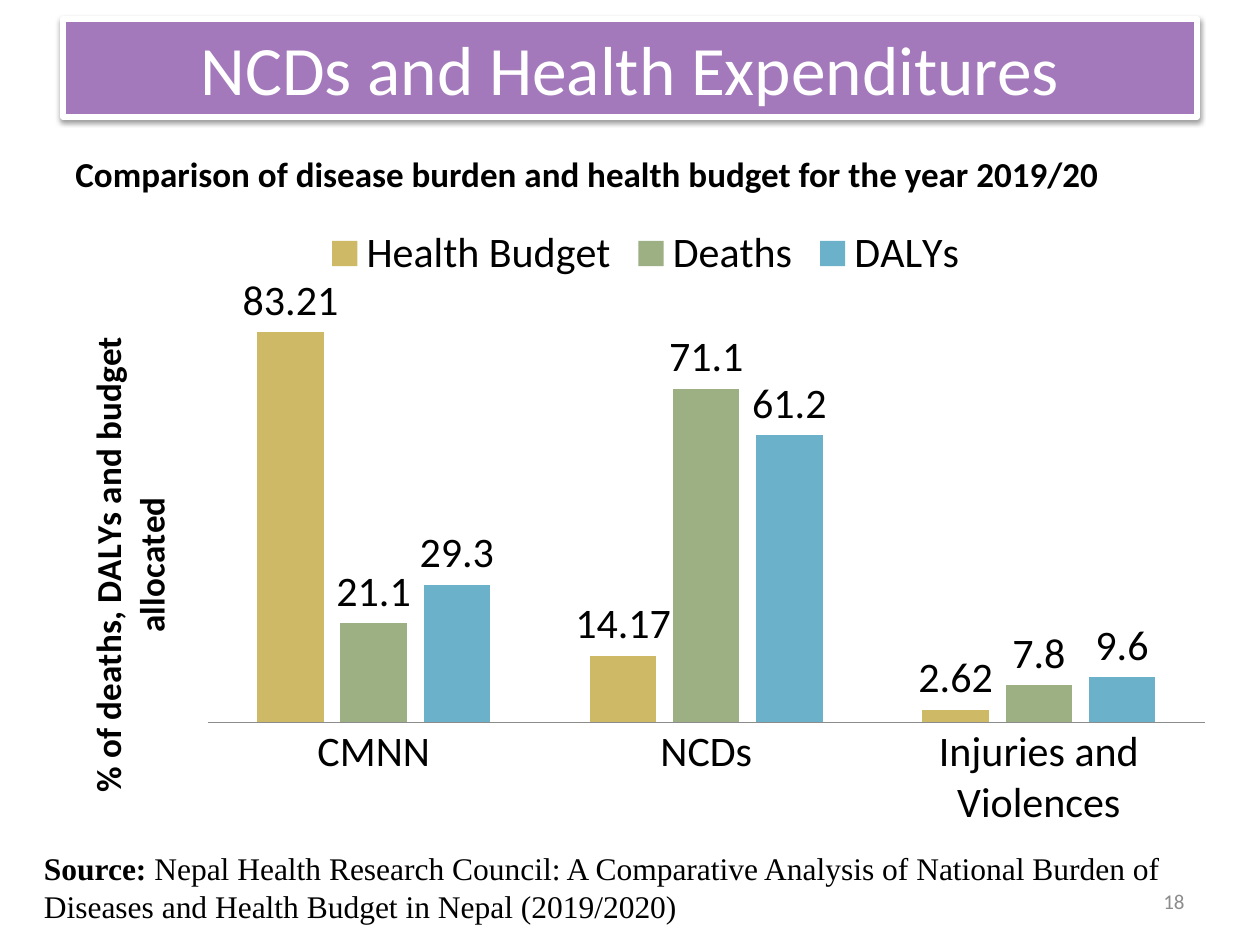
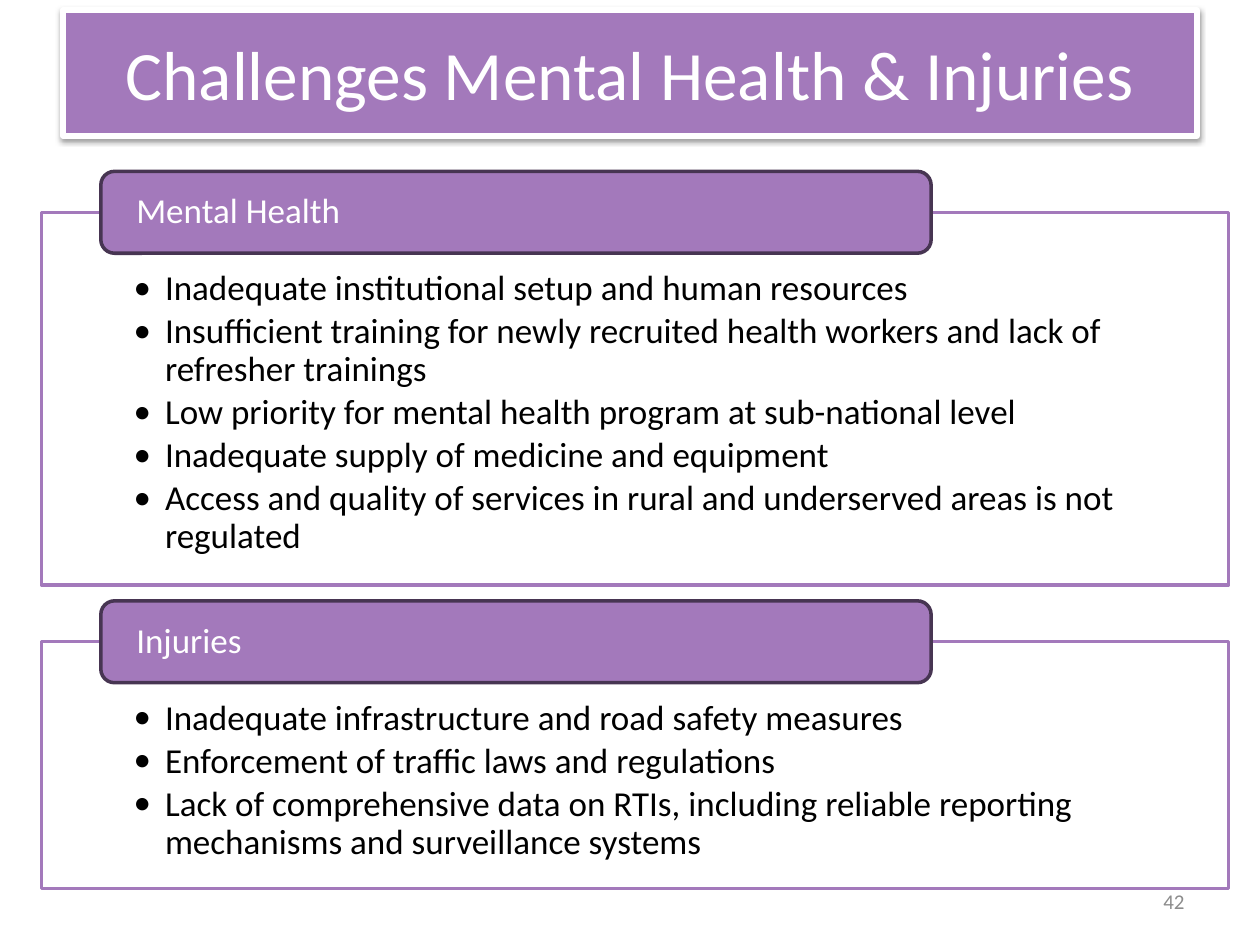
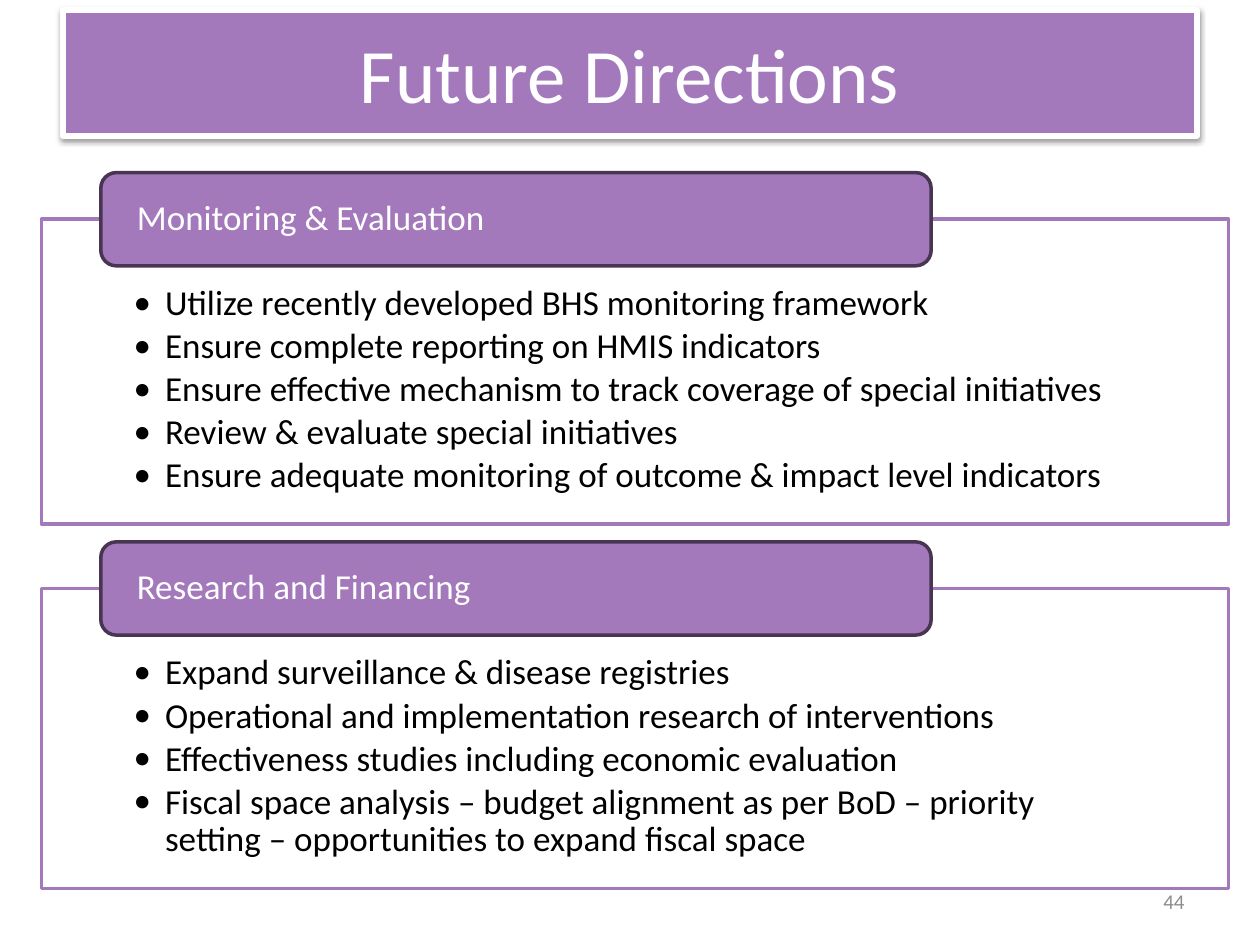
from lxml.etree import SubElement
from pptx import Presentation
from pptx.chart.data import CategoryChartData
from pptx.dml.color import RGBColor
from pptx.enum.chart import XL_CHART_TYPE, XL_LABEL_POSITION, XL_LEGEND_POSITION, XL_TICK_MARK
from pptx.enum.shapes import MSO_SHAPE
from pptx.enum.text import MSO_ANCHOR, PP_ALIGN
from pptx.oxml.ns import qn
from pptx.util import Inches, Pt

PURPLE = RGBColor(0xA3, 0x79, 0xBB)
DARK_PURPLE = RGBColor(0x47, 0x35, 0x52)
WHITE = RGBColor(0xFF, 0xFF, 0xFF)
BLACK = RGBColor(0, 0, 0)
GREY = RGBColor(0x8C, 0x8C, 0x8C)
GOLD = RGBColor(0xCE, 0xB9, 0x66)
GREEN = RGBColor(0x9C, 0xB0, 0x84)
BLUE = RGBColor(0x6B, 0xB1, 0xC9)

BODY_FONT = "Calibri"
SOURCE_FONT = "Times New Roman"


class Deck:
    """Holds the shared style and the page being filled."""

    def __init__(self):
        self.deck = Presentation()
        self.deck.slide_width, self.deck.slide_height = Inches(10), Inches(7.5)
        self.page = None

    def start_page(self, title, number, top=0.08, height=1, size=39.6):
        self.page = self.deck.slides.add_slide(self.deck.slide_layouts[6])
        self.title_band(title, top, height, size)
        self.text(number, 7.17, 6.95, 2.33, 0.4, size=12, color=GREY,
                  align=PP_ALIGN.RIGHT, anchor=MSO_ANCHOR.MIDDLE)

    def style_paragraph(self, para, size, color, bold=None, font=BODY_FONT, align=PP_ALIGN.LEFT):
        para.alignment = align
        para.font.name, para.font.size = font, Pt(size)
        para.font.color.rgb, para.font.bold = color, bold

    def shape(self, kind, left, top, width, height, fill, line, line_width):
        shape = self.page.shapes.add_shape(
            kind, Inches(left), Inches(top), Inches(width), Inches(height))
        shape.shadow.inherit = False
        shape.fill.solid()
        shape.fill.fore_color.rgb = fill
        shape.line.color.rgb, shape.line.width = line, Pt(line_width)
        shape.text_frame.word_wrap = True
        return shape

    def title_band(self, title, top, height, size):
        band = self.shape(MSO_SHAPE.RECTANGLE, 0.5, top, 9, height, PURPLE, WHITE, 3)
        effects = band._element.spPr.find(qn("a:effectLst"))
        shadow = SubElement(effects, qn("a:outerShdw"), blurRad="40000", dist="20000",
                            dir="5400000", rotWithShape="0")
        color = SubElement(shadow, qn("a:srgbClr"), val="000000")
        SubElement(color, qn("a:alpha"), val="38000")
        band.text_frame.vertical_anchor = MSO_ANCHOR.MIDDLE
        para = band.text_frame.paragraphs[0]
        para.text = title
        self.style_paragraph(para, size, WHITE, align=PP_ALIGN.CENTER)

    def text(self, content, left, top, width, height, anchor=MSO_ANCHOR.TOP, **style):
        box = self.page.shapes.add_textbox(
            Inches(left), Inches(top), Inches(width), Inches(height))
        box.text_frame.word_wrap = True
        box.text_frame.vertical_anchor = anchor
        para = box.text_frame.paragraphs[0]
        para.text = content
        self.style_paragraph(para, **style)
        return para

    def bullet(self, para, content):
        para.text = content
        self.style_paragraph(para, 20, BLACK)
        para.line_spacing, para.space_after = 0.9, Pt(3)
        properties = para._p.get_or_add_pPr()
        properties.set("marL", str(Inches(0.25)))
        properties.set("indent", str(Inches(-0.25)))
        SubElement(properties, qn("a:buFont"), typeface=BODY_FONT)
        SubElement(properties, qn("a:buChar"), char="•")
        # The bullet mark must come before the default run settings
        properties.append(properties.find(qn("a:defRPr")))

    def panel(self, heading, items, tab_top, tab_height, height):
        """Outlined bullet list whose top edge runs behind a heading tab."""
        panel = self.shape(MSO_SHAPE.RECTANGLE, 0.33, tab_top + tab_height / 2,
                           9.42, height, WHITE, PURPLE, 2)
        frame = panel.text_frame
        frame.vertical_anchor = MSO_ANCHOR.TOP
        frame.margin_left = frame.margin_right = Inches(0.73)
        frame.margin_top, frame.margin_bottom = Inches(0.71 * tab_height), Inches(0.16)
        for index, item in enumerate(items):
            self.bullet(frame.add_paragraph() if index else frame.paragraphs[0], item)

        tab = self.shape(MSO_SHAPE.ROUNDED_RECTANGLE, 0.8, tab_top, 6.59, tab_height,
                         PURPLE, DARK_PURPLE, 2)
        tab.text_frame.margin_left = Inches(0.25)
        tab.text_frame.margin_bottom = Inches(0.09)
        tab.text_frame.vertical_anchor = MSO_ANCHOR.MIDDLE
        para = tab.text_frame.paragraphs[0]
        para.text = heading
        self.style_paragraph(para, 20, WHITE)

    def panels(self, top, tab_height, sections):
        for heading, height, items in sections:
            self.panel(heading, items, top, tab_height, height)
            top += tab_height / 2 + height + 0.19 * tab_height

    def place_plot(self, chart, left, top, width, height):
        """Fix the plot area inside the axes, in fractions of the chart."""
        area = chart._chartSpace.chart.plotArea
        layout = area.find(qn("c:layout"))
        if layout is None:
            layout = SubElement(area, qn("c:layout"))
            area.insert(0, layout)
        manual = SubElement(layout, qn("c:manualLayout"))
        for tag, value in (("layoutTarget", "inner"), ("xMode", "edge"), ("yMode", "edge"),
                           ("x", left), ("y", top), ("w", width), ("h", height)):
            SubElement(manual, qn("c:" + tag), val=str(value))

    def column_chart(self, categories, series, axis_title, left, top, width, height):
        data = CategoryChartData()
        data.categories = categories
        for name, values, _ in series:
            data.add_series(name, values)
        chart = self.page.shapes.add_chart(
            XL_CHART_TYPE.COLUMN_CLUSTERED, Inches(left), Inches(top),
            Inches(width), Inches(height), data).chart
        chart.font.name, chart.font.size = BODY_FONT, Pt(24)
        chart.font.color.rgb = BLACK
        chart.has_title = False
        chart.has_legend = True
        chart.legend.position = XL_LEGEND_POSITION.TOP
        chart.legend.include_in_layout = False
        self.place_plot(chart, 0.124, 0.142, 0.856, 0.667)

        # Axes
        chart.category_axis.major_tick_mark = XL_TICK_MARK.NONE
        chart.category_axis.format.line.color.rgb = GREY
        chart.category_axis.format.line.width = Pt(0.5)
        value_axis = chart.value_axis
        value_axis.has_major_gridlines = False
        value_axis.minimum_scale, value_axis.maximum_scale = 0, 90
        value_axis.visible = False
        para = value_axis.axis_title.text_frame.paragraphs[0]
        para.text = axis_title
        self.style_paragraph(para, 20, BLACK, bold=True, align=PP_ALIGN.CENTER)

        # Columns
        plot = chart.plots[0]
        plot.gap_width, plot.overlap, plot.vary_by_categories = 150, -25, False
        plot.has_data_labels = True
        plot.data_labels.show_value = True
        plot.data_labels.position = XL_LABEL_POSITION.OUTSIDE_END
        for column, (_, _, color) in zip(plot.series, series):
            column.format.fill.solid()
            column.format.fill.fore_color.rgb = color


def main():
    deck = Deck()

    # Burden and budget
    deck.start_page("NCDs and Health Expenditures", "18", top=0.15, height=0.78)
    deck.column_chart(
        ["CMNN", "NCDs", "Injuries and Violences"],
        [("Health Budget", (83.21, 14.17, 2.62), GOLD),
         ("Deaths", (21.1, 71.1, 7.8), GREEN),
         ("DALYs", (29.3, 61.2, 9.6), BLUE)],
        "% of deaths, DALYs and budget allocated", 0.5, 1.67, 9.25, 5.02)
    source = deck.text("Source: ", 0.25, 6.69, 9.5, 0.71,
                       size=18, color=BLACK, font=SOURCE_FONT)
    source.runs[0].font.bold = True
    span = source.add_run()
    span.text = ("Nepal Health Research Council: A Comparative Analysis of National Burden "
                 "of Diseases and Health Budget in Nepal (2019/2020)")
    deck.text("Comparison of disease burden and health budget for the year 2019/20",
              0.5, 1.16, 9.25, 0.44, size=20, color=BLACK, bold=True)

    # Challenges
    deck.start_page("Challenges Mental Health & Injuries", "42")
    deck.panels(1.36, 0.65, [
        ("Mental Health", 2.96, [
            "Inadequate institutional setup and human resources",
            "Insufficient training for newly recruited health workers and lack of "
            "refresher trainings",
            "Low priority for mental health program at sub-national level",
            "Inadequate supply of medicine and equipment",
            "Access and quality of services in rural and underserved areas is not regulated"]),
        ("Injuries", 1.96, [
            "Inadequate infrastructure and road safety measures",
            "Enforcement of traffic laws and regulations",
            "Lack of comprehensive data on RTIs, including reliable reporting "
            "mechanisms and surveillance systems"])])

    # Future directions
    deck.start_page("Future Directions", "44", size=44)
    deck.panels(1.37, 0.74, [
        ("Monitoring & Evaluation", 2.42, [
            "Utilize recently developed BHS monitoring framework",
            "Ensure complete reporting on HMIS indicators",
            "Ensure effective mechanism to track coverage of special initiatives",
            "Review & evaluate special initiatives",
            "Ensure adequate monitoring of outcome & impact level indicators"]),
        ("Research and Financing", 2.38, [
            "Expand surveillance & disease registries",
            "Operational and implementation research of interventions",
            "Effectiveness studies including economic evaluation",
            "Fiscal space analysis – budget alignment as per BoD – priority setting – "
            "opportunities to expand fiscal space"])])

    deck.deck.save("out.pptx")


if __name__ == "__main__":
    main()
